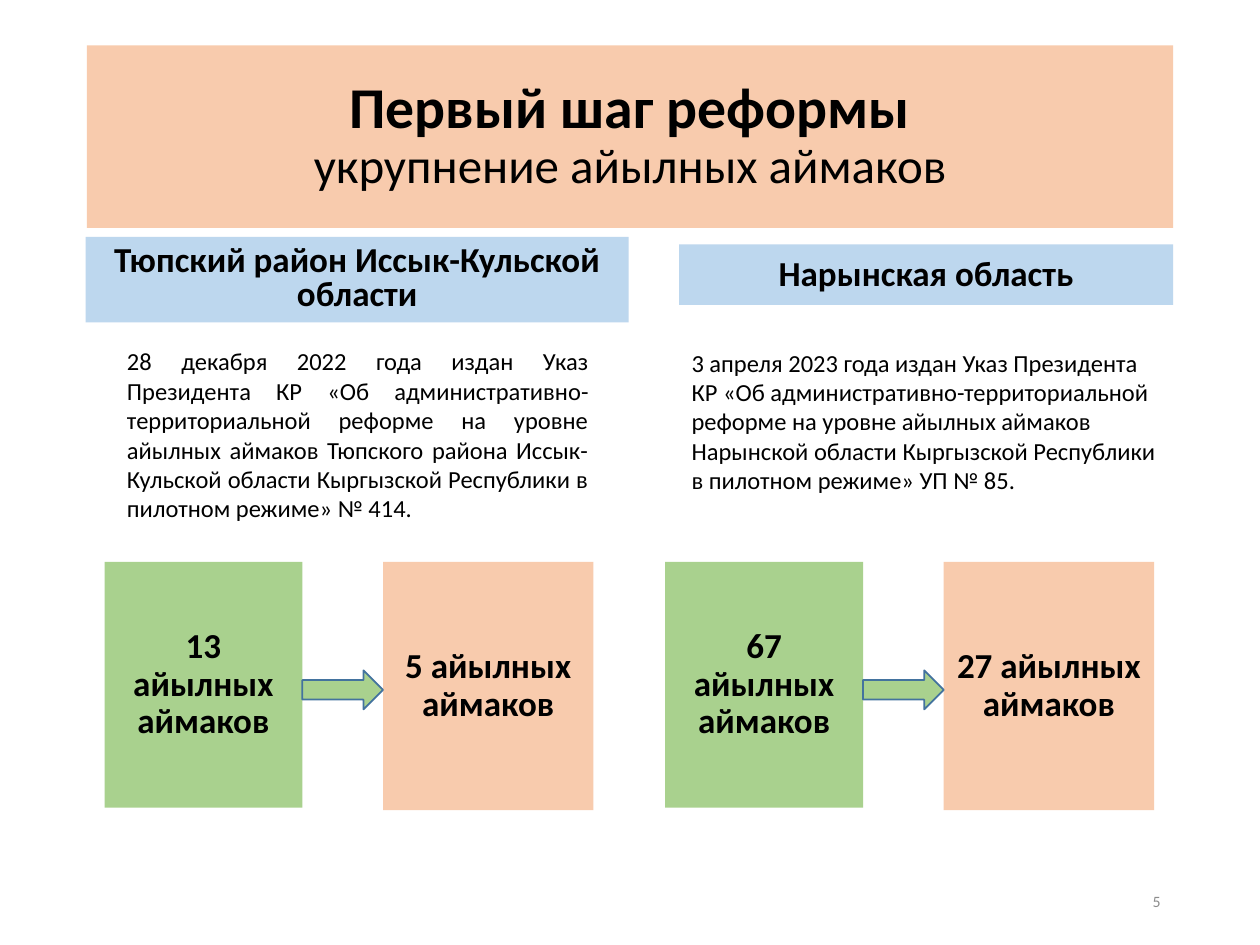
from pptx import Presentation
from pptx.dml.color import RGBColor
from pptx.enum.shapes import MSO_SHAPE as Shape
from pptx.enum.text import MSO_ANCHOR as Anchor, PP_ALIGN as Align
from pptx.util import Inches, Pt

PEACH, BLUE, GREEN = "F8CBAD", "BDD7EE", "A9D18E"


def paint(fill, color):
    fill.solid()
    fill.fore_color.rgb = RGBColor.from_string(color)


def write(par, text, size, bold=False, color="000000"):
    run = par.add_run()
    run.text = text
    run.font.name = "Calibri"
    run.font.size = Pt(size)
    run.font.bold = bold
    paint(run.font.fill, color)


deck = Presentation()
deck.slide_width, deck.slide_height = Inches(10), Inches(7.5)
slide = deck.slides.add_slide(deck.slide_layouts[5])
shapes = slide.shapes

# Title
title = shapes.title
title.left, title.top = Inches(0.69), Inches(0.36)
title.width, title.height = Inches(8.62), Inches(1.45)
paint(title.fill, PEACH)
title.text_frame.vertical_anchor = Anchor.MIDDLE
par = title.text_frame.paragraphs[0]
par.alignment = Align.CENTER
par.line_spacing = 0.9
write(par, "Первый шаг реформы", 33, True)
par.add_line_break()
write(par, "укрупнение айылных аймаков", 28)

# Decrees and page number
notes = [
    (0.91, 2.7, 3.86, 1.51, Align.JUSTIFY, Anchor.TOP, 14, "000000",
     "28 декабря 2022 года издан Указ Президента КР «Об "
     "административно-территориальной реформе на уровне айылных аймаков "
     "Тюпского района Иссык-Кульской области Кыргызской Республики "
     "в пилотном режиме» № 414."),
    (5.39, 2.71, 3.94, 1.28, Align.LEFT, Anchor.TOP, 14, "000000",
     "3 апреля 2023 года издан Указ Президента КР «Об "
     "административно-территориальной реформе на уровне айылных аймаков "
     "Нарынской области Кыргызской Республики в пилотном режиме» УП № 85."),
    (7.06, 6.95, 2.25, 0.4, Align.RIGHT, Anchor.MIDDLE, 9, "8C8C8C", "5"),
]
for x, y, w, h, align, anchor, size, color, text in notes:
    box = shapes.add_textbox(Inches(x), Inches(y), Inches(w), Inches(h))
    frame = box.text_frame
    frame.word_wrap = True
    frame.vertical_anchor = anchor
    frame.paragraphs[0].alignment = align
    write(frame.paragraphs[0], text, size, color=color)

# Region headings, then the count before and after in each region
cards = [
    (0.68, 1.88, 4.31, 0.68, BLUE, 0.8, "Тюпский район Иссык-Кульской области"),
    (5.39, 1.94, 3.92, 0.48, BLUE, 0.9, "Нарынская область"),
]
for x, old, new in [(0.83, 13, 5), (5.28, 67, 27)]:
    cards += [
        (x, 4.46, 1.57, 1.95, GREEN, 0.9, f"{old} айылных аймаков"),
        (x + 2.21, 4.46, 1.67, 1.97, PEACH, 0.9, f"{new} айылных аймаков"),
    ]
for x, y, w, h, color, space, text in cards:
    card = shapes.add_shape(Shape.RECTANGLE, Inches(x), Inches(y), Inches(w), Inches(h))
    card.shadow.inherit = False
    paint(card.fill, color)
    card.line.fill.background()
    frame = card.text_frame
    frame.word_wrap = True
    frame.vertical_anchor = Anchor.MIDDLE
    par = frame.paragraphs[0]
    par.alignment = Align.CENTER
    par.line_spacing = space
    write(par, text, 20, True)

# Arrows from old to new count
for x in (2.4, 6.85):
    arrow = shapes.add_shape(Shape.RIGHT_ARROW, Inches(x), Inches(5.32), Inches(0.64), Inches(0.31))
    arrow.shadow.inherit = False
    paint(arrow.fill, GREEN)
    paint(arrow.line.fill, "43739E")
    arrow.line.width = Pt(1)

deck.save("out.pptx")
